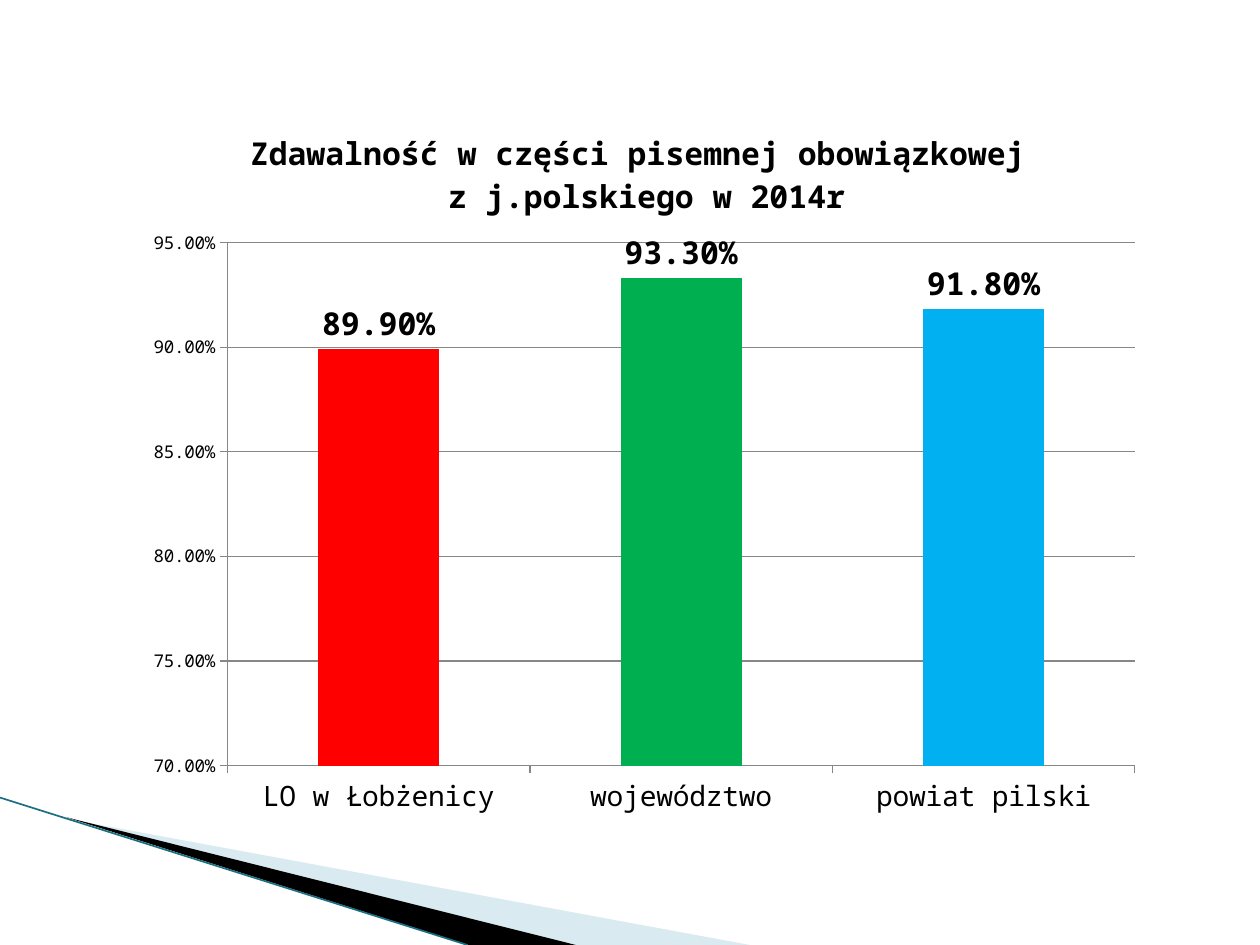
from lxml.etree import SubElement
from pptx import Presentation
from pptx.chart.data import CategoryChartData
from pptx.dml.color import RGBColor
from pptx.enum.chart import XL_CHART_TYPE, XL_LABEL_POSITION, XL_TICK_MARK
from pptx.enum.shapes import MSO_CONNECTOR
from pptx.oxml import parse_xml
from pptx.oxml.ns import nsdecls, qn
from pptx.util import Inches, Pt

WIDTH, HEIGHT = Inches(10), Inches(7.5)
FONT = "Noto Sans Mono"
BLACK = RGBColor(0x00, 0x00, 0x00)
PALE_BLUE = RGBColor(0xA0, 0xCB, 0xDC)
TEAL = RGBColor(0x1B, 0x6F, 0x82)
GRAY = RGBColor(0x87, 0x87, 0x87)
RED = RGBColor(0xFF, 0x00, 0x00)
GREEN = RGBColor(0x00, 0xB0, 0x50)
BLUE = RGBColor(0x00, 0xB0, 0xF0)

TITLE_LINES = ["Zdawalność w części pisemnej obowiązkowej ", "z j.polskiego w 2014r"]
PASS_RATES = [
    ("LO w Łobżenicy", 0.899, RED),
    ("województwo", 0.933, GREEN),
    ("powiat pilski", 0.918, BLUE),
]


def across(share):
    return round(WIDTH * share)


def down(share):
    return round(HEIGHT * share)


def style_font(font, size, bold=False, color=BLACK):
    font.name = FONT
    font.size = Pt(size)
    font.bold = bold
    font.color.rgb = color


def add_text(paragraph, text, **text_format):
    run = paragraph.add_run()
    run.text = text
    style_font(run.font, **text_format)


def add_wedge(slide, corners, color, opacity=None):
    points = [(across(x), down(y)) for x, y in corners]
    builder = slide.shapes.build_freeform(*points[0])
    builder.add_line_segments(points[1:], close=True)
    wedge = builder.convert_to_shape()
    wedge.shadow.inherit = False
    wedge.fill.solid()
    wedge.fill.fore_color.rgb = color
    wedge.line.fill.background()
    if opacity is not None:
        tint = wedge.fill._xPr.find(f"{qn('a:solidFill')}/{qn('a:srgbClr')}")
        SubElement(tint, qn("a:alpha"), val=str(opacity * 1000))


def add_edge(slide, start, end, color, width):
    edge = slide.shapes.add_connector(
        MSO_CONNECTOR.STRAIGHT,
        across(start[0]), down(start[1]), across(end[0]), down(end[1]))
    edge.line.color.rgb = color
    edge.line.width = Pt(width)
    SubElement(edge._element.spPr, qn("a:effectLst"))


def place_chart_part(part, index, target="", **shares):
    for old in part.findall(qn("c:layout")):
        part.remove(old)
    modes = "".join(f'<c:{axis}Mode val="edge"/>' for axis in "xy")
    sizes = "".join(f'<c:{name} val="{share}"/>' for name, share in shares.items())
    part.insert(index, parse_xml(
        f"<c:layout {nsdecls('c')}><c:manualLayout>{target}{modes}{sizes}"
        "</c:manualLayout></c:layout>"))


def format_title(chart):
    chart.has_title = True
    title = chart.chart_title
    title.include_in_layout = False
    frame = title.text_frame
    for number, line in enumerate(TITLE_LINES):
        paragraph = frame.add_paragraph() if number else frame.paragraphs[0]
        add_text(paragraph, line, size=18, bold=True)
    place_chart_part(title._element, 1, x=0.11, y=0.04)


def format_axis(axis, size):
    axis.major_tick_mark = XL_TICK_MARK.OUTSIDE
    axis.minor_tick_mark = XL_TICK_MARK.NONE
    axis.format.line.color.rgb = GRAY
    axis.format.line.width = Pt(0.75)
    style_font(axis.tick_labels.font, size)


def format_value_axis(axis):
    format_axis(axis, 10)
    axis.minimum_scale, axis.maximum_scale = 0.7, 0.95
    axis.major_unit = 0.05
    axis.tick_labels.number_format = "0.00%"
    axis.tick_labels.number_format_is_linked = False
    axis.has_major_gridlines = True
    axis.major_gridlines.format.line.color.rgb = GRAY
    axis.major_gridlines.format.line.width = Pt(0.75)


def format_columns(plot):
    plot.gap_width = 150
    plot.vary_by_categories = False
    series = plot.series[0]
    series.format.fill.solid()
    series.format.fill.fore_color.rgb = RED
    for number, (_, _, color) in enumerate(PASS_RATES):
        column = series.points[number].format.fill
        column.solid()
        column.fore_color.rgb = color
    labels = series.data_labels
    labels.show_value = True
    labels.number_format = "0.00%"
    labels.number_format_is_linked = False
    labels.position = XL_LABEL_POSITION.OUTSIDE_END
    style_font(labels.font, 18, bold=True)


def add_pass_rate_chart(slide):
    rates = CategoryChartData(number_format="0.00%")
    rates.categories = [place for place, _, _ in PASS_RATES]
    rates.add_series("Series 1", [rate for _, rate, _ in PASS_RATES])
    chart = slide.shapes.add_chart(
        XL_CHART_TYPE.COLUMN_CLUSTERED,
        Inches(1.06), Inches(0.76), Inches(8.11), Inches(5.83), rates).chart
    style_font(chart.font, 10)
    chart.has_legend = False
    format_title(chart)
    format_axis(chart.category_axis, 16)
    format_value_axis(chart.value_axis)
    format_columns(chart.plots[0])
    place_chart_part(
        chart._chartSpace.chart.plotArea, 0,
        target='<c:layoutTarget val="inner"/>', x=0.092, y=0.2, w=0.888, h=0.712)


def main():
    presentation = Presentation()
    presentation.slide_width, presentation.slide_height = WIDTH, HEIGHT
    slide = presentation.slides.add_slide(presentation.slide_layouts[6])
    add_wedge(slide, [(0.055, 0.867), (0.595, 1), (0.456, 1)], PALE_BLUE, opacity=40)
    add_wedge(slide, [(0.053, 0.865), (0.457, 1), (0.372, 1)], BLACK)
    add_edge(slide, (0, 0.844), (0.371, 1), TEAL, 0.95)
    add_pass_rate_chart(slide)
    presentation.save("out.pptx")


if __name__ == "__main__":
    main()
